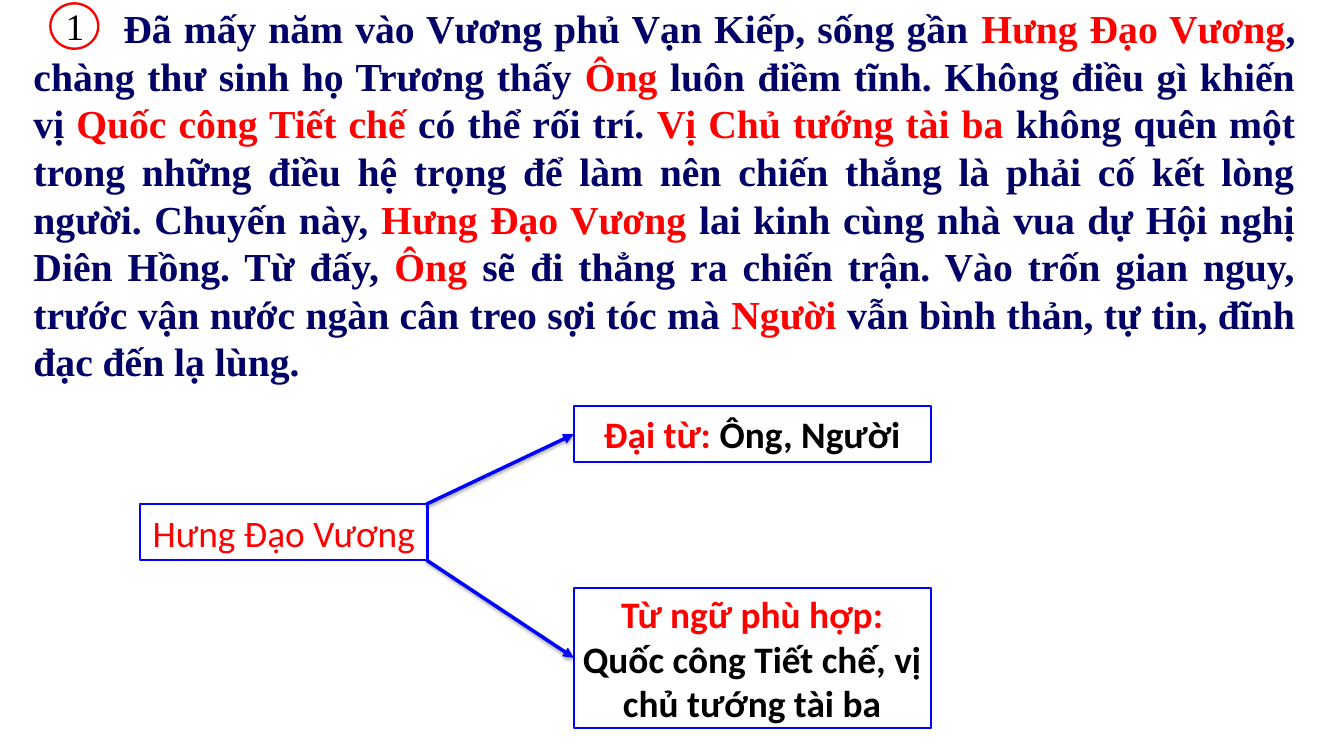
from dataclasses import dataclass

from lxml import etree
from pptx import Presentation
from pptx.dml.color import RGBColor
from pptx.enum.shapes import MSO_CONNECTOR, MSO_SHAPE
from pptx.enum.text import MSO_ANCHOR, MSO_AUTO_SIZE, PP_ALIGN
from pptx.oxml.ns import qn
from pptx.util import Inches, Pt

RECT, OVAL = MSO_SHAPE.RECTANGLE, MSO_SHAPE.OVAL
LINE = MSO_CONNECTOR.STRAIGHT
MIDDLE, GROW = MSO_ANCHOR.MIDDLE, MSO_AUTO_SIZE.SHAPE_TO_FIT_TEXT
CENTER, JUSTIFY = PP_ALIGN.CENTER, PP_ALIGN.JUSTIFY

NAVY, RED, BLUE = "000066", "FF0000", "0000FF"
BLACK, WHITE = "000000", "FFFFFF"
SERIF, SANS = "Times New Roman", "Calibri"

Part = tuple[str, str]  # text and colour


@dataclass
class Box:
    left: float
    top: float
    width: float
    height: float
    lines: list[list[Part]]
    bold: bool = True
    kind: int = RECT
    edge: str = BLUE
    font: str = SANS


@dataclass
class Arrow:
    start: tuple[float, float]
    end: tuple[float, float]


STORY = [
    ("Đã mấy năm vào Vương phủ Vạn Kiếp, sống gần ", NAVY),
    ("Hưng Đạo Vương", RED),
    (", chàng thư sinh họ Trương thấy ", NAVY),
    ("Ông ", RED),
    ("luôn điềm tĩnh. Không điều gì khiến vị ", NAVY),
    ("Quốc công Tiết chế ", RED),
    ("có thể rối trí. ", NAVY),
    ("Vị Chủ tướng tài ba ", RED),
    ("không quên một trong những điều hệ trọng để làm nên chiến thắng "
     "là phải cố kết lòng người. Chuyến này, ", NAVY),
    ("Hưng Đạo Vương ", RED),
    ("lai kinh cùng nhà vua dự Hội nghị Diên Hồng. Từ đấy, ", NAVY),
    ("Ông ", RED),
    ("sẽ đi thẳng ra chiến trận. Vào trốn gian nguy, trước vận nước "
     "ngàn cân treo sợi tóc mà ", NAVY),
    ("Người ", RED),
    ("vẫn bình thản, tự tin, đĩnh đạc đến lạ lùng.", NAVY),
]

BOXES = [
    Box(0.6, 0.04, 0.57, 0.54, [[("1", BLACK)]], False, OVAL, RED, SERIF),
    Box(1.67, 6, 3.42, 0.67, [[("Hưng Đạo Vương", RED)]], False),
    Box(6.83, 4.83, 4.25, 0.67,
        [[("Đại từ: ", RED), ("Ông, Người", BLACK)]]),
    Box(6.83, 7, 4.25, 1.67,
        [[("Từ ngữ phù hợp:", RED)],
         [("Quốc công Tiết chế, vị chủ tướng tài ba", BLACK)]]),
]

ARROWS = [
    Arrow((5.08, 6), (6.83, 5.17)),
    Arrow((5.08, 6.67), (6.83, 7.83)),
]


def color(code: str) -> RGBColor:
    return RGBColor.from_string(code)


def write(para, parts: list[Part], font: str, size: int, bold: bool) -> None:
    for text, code in parts:
        run = para.add_run()
        run.text = text
        run.font.name = font
        run.font.size = Pt(size)
        run.font.bold = bold
        run.font.color.rgb = color(code)


def add_story(slide) -> None:
    area = slide.shapes.add_textbox(
        Inches(0.3), Inches(0), Inches(15.22), Inches(4.68))
    frame = area.text_frame
    frame.word_wrap = True
    frame.auto_size = GROW
    para = frame.paragraphs[0]
    para.alignment = JUSTIFY
    para._p.get_or_add_pPr().set("indent", str(Inches(1.07)))
    write(para, STORY, SERIF, 34, True)


def add_box(slide, box: Box) -> None:
    shape = slide.shapes.add_shape(
        box.kind, Inches(box.left), Inches(box.top),
        Inches(box.width), Inches(box.height))
    shape.shadow.inherit = False
    shape.fill.solid()
    shape.fill.fore_color.rgb = color(WHITE)
    shape.line.color.rgb = color(box.edge)
    shape.line.width = Pt(2)
    frame = shape.text_frame
    frame.word_wrap = True
    frame.vertical_anchor = MIDDLE
    for i, parts in enumerate(box.lines):
        para = frame.add_paragraph() if i else frame.paragraphs[0]
        para.alignment = CENTER
        write(para, parts, box.font, 32, box.bold)


def add_arrow(slide, arrow: Arrow) -> None:
    """Draw a blue arrow with a soft shadow below it."""
    ends = [Inches(n) for n in (*arrow.start, *arrow.end)]
    link = slide.shapes.add_connector(LINE, *ends)
    link.line.color.rgb = color(BLUE)
    link.line.width = Pt(3)
    etree.SubElement(link.line._get_or_add_ln(), qn("a:tailEnd"),
                     type="triangle")
    effects = etree.SubElement(link._element.spPr, qn("a:effectLst"))
    shade = etree.SubElement(
        effects, qn("a:outerShdw"), blurRad=str(Pt(3.1)), dist=str(Pt(1.8)),
        dir="5400000", rotWithShape="0")
    tint = etree.SubElement(shade, qn("a:srgbClr"), val=BLACK)
    etree.SubElement(tint, qn("a:alpha"), val="35000")


def main() -> None:
    deck = Presentation()
    deck.slide_width, deck.slide_height = Inches(16), Inches(9)
    slide = deck.slides.add_slide(deck.slide_layouts[6])
    add_story(slide)
    for box in BOXES:
        add_box(slide, box)
    for arrow in ARROWS:
        add_arrow(slide, arrow)
    deck.save("out.pptx")


if __name__ == "__main__":
    main()
